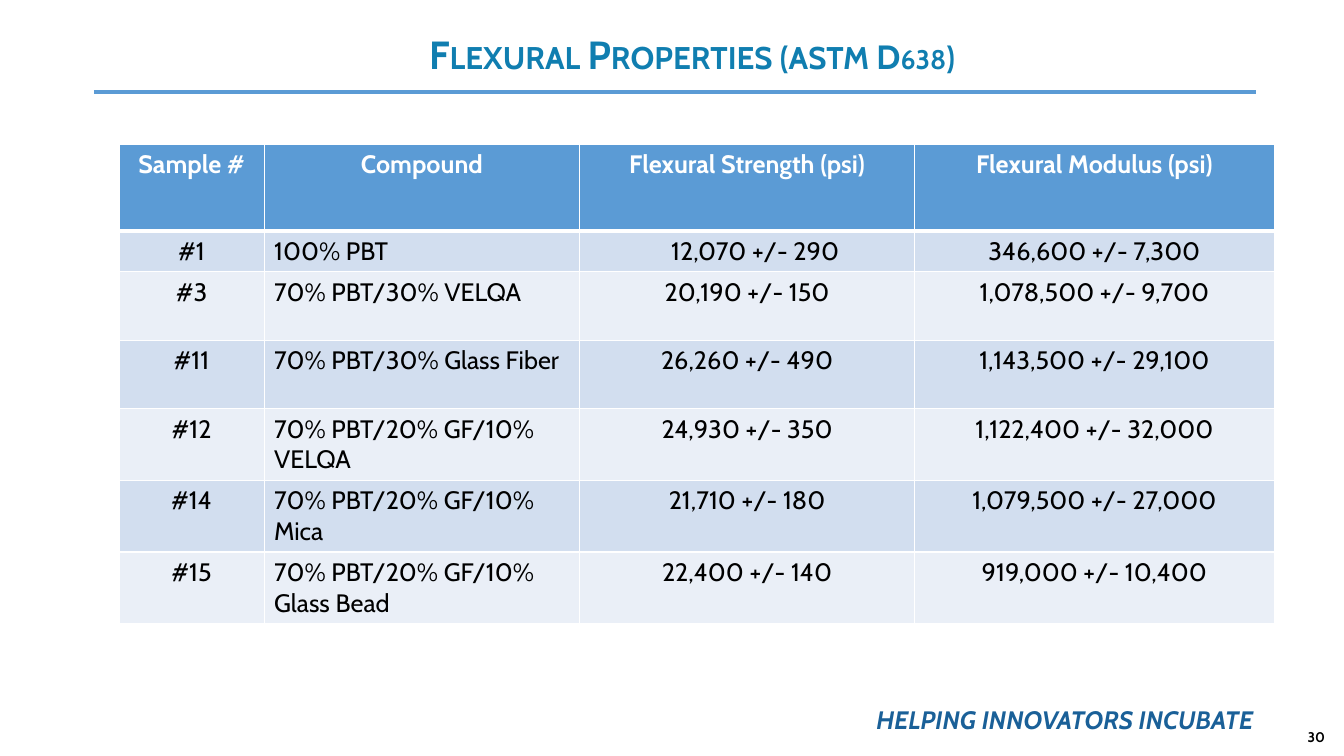
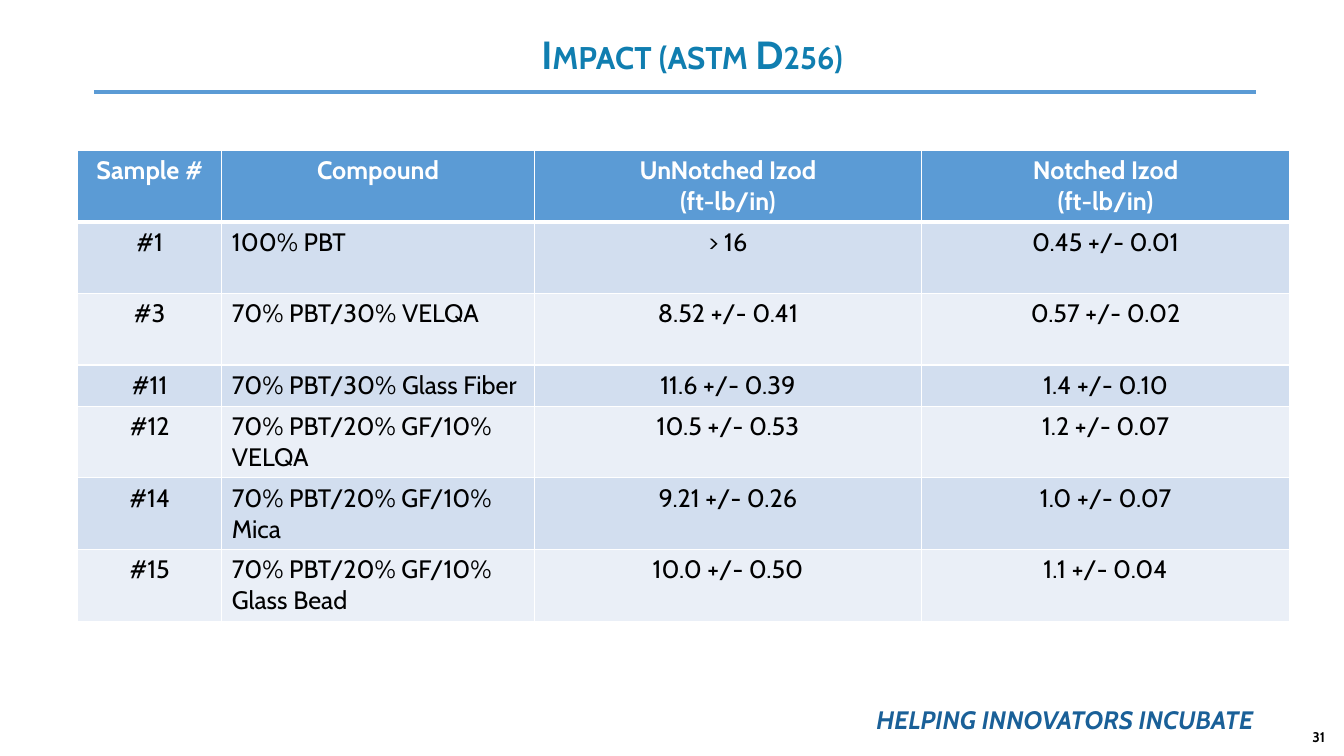
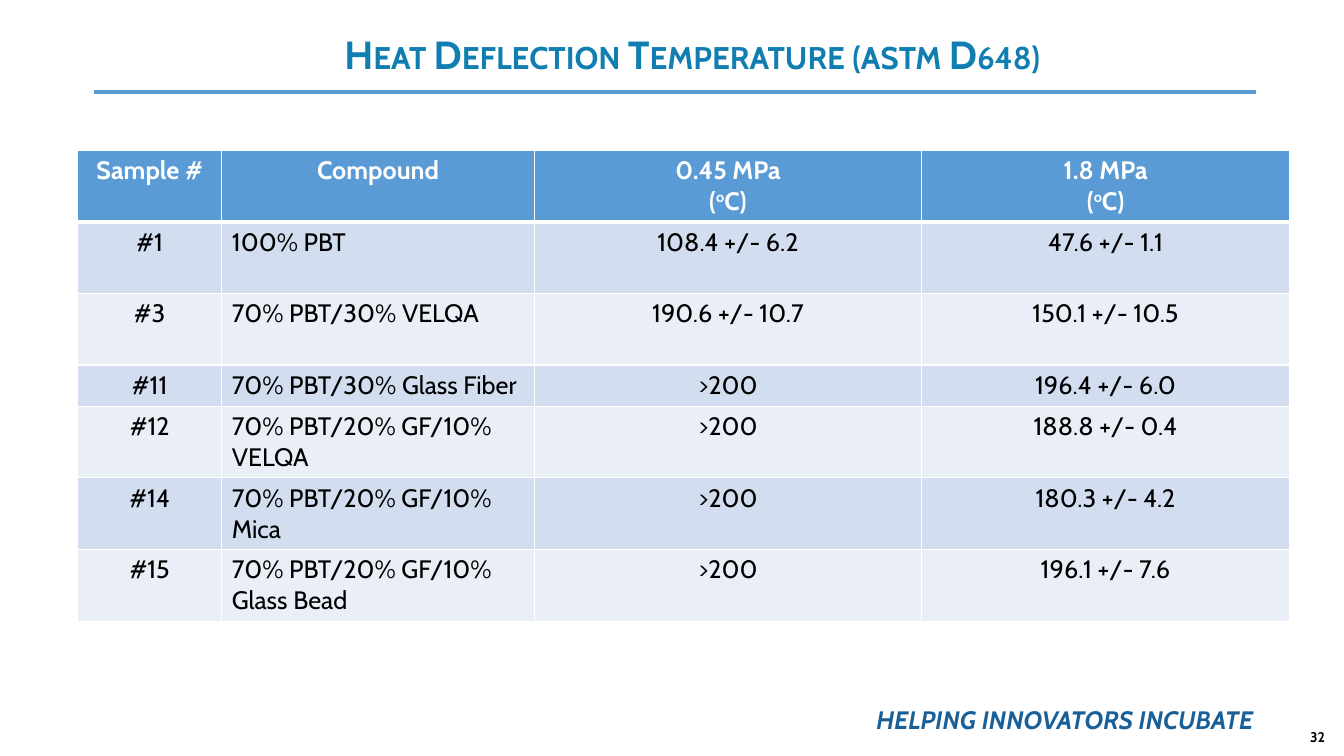
from lxml.etree import SubElement
from pptx import Presentation
from pptx.dml.color import RGBColor
from pptx.enum.shapes import MSO_CONNECTOR, MSO_SHAPE
from pptx.enum.text import MSO_ANCHOR, PP_ALIGN, MSO_AUTO_SIZE
from pptx.oxml.ns import qn
from pptx.util import Inches, Pt

FONT = "Cabin"
WHITE = RGBColor(0xFF, 0xFF, 0xFF)
BLACK = RGBColor(0x00, 0x00, 0x00)
BLUE = RGBColor(0x5B, 0x9B, 0xD5)
TITLE_BLUE = RGBColor(0x10, 0x7E, 0xB0)
SLOGAN_BLUE = RGBColor(0x1A, 0x60, 0x98)
BANDS = (RGBColor(0xD2, 0xDE, 0xEF), RGBColor(0xEA, 0xEF, 0xF7))

FIRST_NUMBER = 30
SAMPLES = [
    ("#1", "100% PBT"),
    ("#3", "70% PBT/30% VELQA"),
    ("#11", "70% PBT/30% Glass Fiber"),
    ("#12", "70% PBT/20% GF/10% VELQA"),
    ("#14", "70% PBT/20% GF/10% Mica"),
    ("#15", "70% PBT/20% GF/10% Glass Bead"),
]

FLEXURAL_GRID = dict(left=1.18, top=1.43, cols=(1.44, 3.13, 3.32, 3.57),
                     rows=(0.86, 0.4, 0.68, 0.68, 0.71, 0.71, 0.71))
WIDE_GRID = dict(left=0.77, top=1.49, cols=(1.43, 3.1, 3.84, 3.65),
                 rows=(0.71, 0.71, 0.71, 0.41, 0.71, 0.71, 0.71))

# Title runs with sizes, table grid, two value headings, one pair of values per sample
SLIDES = [
    ([("Flexural Properties (astm ", 28), ("D638", 24), (")", 28)], FLEXURAL_GRID,
     ("Flexural Strength (psi)", "Flexural Modulus (psi)"),
     [("12,070 +/- 290", "346,600 +/- 7,300"),
      ("20,190 +/- 150", "1,078,500 +/- 9,700"),
      ("26,260 +/- 490", "1,143,500 +/- 29,100"),
      ("24,930 +/- 350", "1,122,400 +/- 32,000"),
      ("21,710 +/- 180", "1,079,500 +/- 27,000"),
      ("22,400 +/- 140", "919,000 +/- 10,400")]),
    ([("Impact (astm D256)", 28)], WIDE_GRID,
     ("UnNotched Izod\n(ft-lb/in)", "Notched Izod\n(ft-lb/in)"),
     [("> 16", "0.45 +/- 0.01"),
      ("8.52 +/- 0.41", "0.57 +/- 0.02"),
      ("11.6 +/- 0.39", "1.4 +/- 0.10"),
      ("10.5 +/- 0.53", "1.2 +/- 0.07"),
      ("9.21 +/- 0.26", "1.0 +/- 0.07"),
      ("10.0 +/- 0.50", "1.1 +/- 0.04")]),
    ([("Heat Deflection Temperature (astm D648)", 28)], WIDE_GRID,
     ("0.45 MPa\n(^o^C)", "1.8 MPa\n(^o^C)"),
     [("108.4 +/- 6.2", "47.6 +/- 1.1"),
      ("190.6 +/- 10.7", "150.1 +/- 10.5"),
      (">200", "196.4 +/- 6.0"),
      (">200", "188.8 +/- 0.4"),
      (">200", "180.3 +/- 4.2"),
      (">200", "196.1 +/- 7.6")]),
]


def add_run(p, text, size, color, bold=False, italic=False):
    r = p.add_run()
    r.text = text
    font = r.font
    font.name, font.size, font.bold, font.italic = FONT, Pt(size), bold, italic
    font.color.rgb = color
    return r


def set_title(s, runs):
    title = s.shapes.title
    title.left, title.top = Inches(1.85), Inches(0.3)
    title.width, title.height = Inches(10.03), Inches(0.53)
    tf = title.text_frame
    tf.word_wrap = True
    tf.auto_size = MSO_AUTO_SIZE.NONE
    tf.vertical_anchor = MSO_ANCHOR.MIDDLE
    p = tf.paragraphs[0]
    p.alignment = PP_ALIGN.CENTER
    p.line_spacing = 0.9
    for text, size in runs:
        r = add_run(p, text, size, TITLE_BLUE, bold=True)
        r.font._element.set("cap", "small")


def add_title_rule(s):
    line = s.shapes.add_connector(MSO_CONNECTOR.STRAIGHT, Inches(0.93), Inches(0.91),
                                  Inches(12.46), Inches(0.91))
    line.line.color.rgb = BLUE
    line.line.width = Pt(3)
    SubElement(line._element.spPr, qn("a:effectLst"))


def add_slide_number(s, number):
    box = s.shapes.add_textbox(Inches(12.68), Inches(7.2), Inches(0.56), Inches(0.23))
    tf = box.text_frame
    tf.word_wrap = True
    tf.vertical_anchor = MSO_ANCHOR.MIDDLE
    p = tf.paragraphs[0]
    p.alignment = PP_ALIGN.RIGHT
    add_run(p, str(number), 10, BLACK, bold=True)


def add_slogan(s):
    sp = s.shapes.add_shape(MSO_SHAPE.RECTANGLE, Inches(8.2), Inches(6.94),
                            Inches(4.72), Inches(0.4))
    sp.shadow.inherit = False
    sp.fill.solid()
    sp.fill.fore_color.rgb = WHITE
    sp.line.fill.background()
    tf = sp.text_frame
    tf.word_wrap = True
    tf.vertical_anchor = MSO_ANCHOR.TOP
    p = tf.paragraphs[0]
    p.alignment = PP_ALIGN.CENTER
    add_run(p, "HELPING INNOVATORS INCUBATE", 18, SLOGAN_BLUE, bold=True, italic=True)


def set_borders(cell, top=1, bottom=1):
    """Draw white cell borders; call before the fill is set."""
    tc_pr = cell._tc.get_or_add_tcPr()
    for side, width in (("L", 1), ("R", 1), ("T", top), ("B", bottom)):
        ln = SubElement(tc_pr, qn(f"a:ln{side}"), w=str(Pt(width)))
        fill = SubElement(ln, qn("a:solidFill"))
        SubElement(fill, qn("a:srgbClr"), val=str(WHITE))


def fill_cell(cell, text, row, col):
    """Write one cell; text between carets is raised."""
    header = row == 0
    set_borders(cell, top=3 if row == 1 else 1, bottom=3 if header else 1)
    cell.fill.solid()
    cell.fill.fore_color.rgb = BLUE if header else BANDS[(row - 1) % 2]
    tf = cell.text_frame
    for i, line in enumerate(text.split("\n")):
        p = tf.add_paragraph() if i else tf.paragraphs[0]
        p.alignment = PP_ALIGN.CENTER if header or col != 1 else PP_ALIGN.LEFT
        for j, part in enumerate(line.split("^")):
            r = add_run(p, part, 18, WHITE if header else BLACK, bold=header)
            if j % 2:
                r.font._element.set("baseline", "30000")


def add_results_table(s, grid, headings, values):
    cols, rows = grid["cols"], grid["rows"]
    frame = s.shapes.add_table(len(rows), len(cols), Inches(grid["left"]), Inches(grid["top"]),
                               Inches(sum(cols)), Inches(sum(rows)))
    table = frame.table
    for column, width in zip(table.columns, cols):
        column.width = Inches(width)
    for row, height in zip(table.rows, rows):
        row.height = Inches(height)
    texts = [("Sample #", "Compound", *headings)]
    texts += [sample + pair for sample, pair in zip(SAMPLES, values)]
    for i, row_texts in enumerate(texts):
        for j, text in enumerate(row_texts):
            fill_cell(table.cell(i, j), text, i, j)
    return table


def main():
    prs = Presentation()
    prs.slide_width, prs.slide_height = Inches(13.33), Inches(7.5)
    tables = []
    for number, (title, grid, headings, values) in enumerate(SLIDES, FIRST_NUMBER):
        s = prs.slides.add_slide(prs.slide_layouts[5])
        set_title(s, title)
        add_title_rule(s)
        tables.append(add_results_table(s, grid, headings, values))
        add_slide_number(s, number)
        add_slogan(s)
    # The first flexural strength sits slightly right of centre
    tables[0].cell(1, 2).margin_left = Inches(0.26)
    prs.save("out.pptx")


if __name__ == "__main__":
    main()
